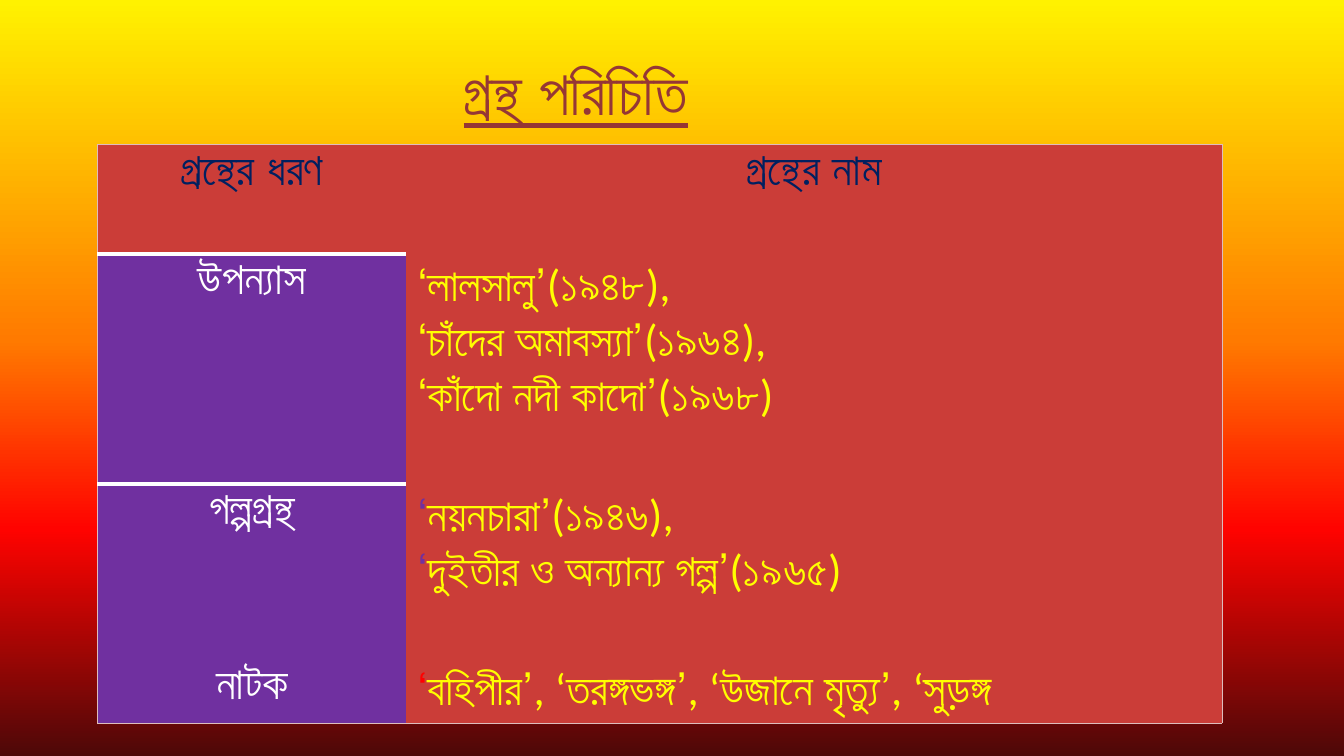
import pptx
import pptx.util
import pptx.dml.color
import pptx.enum.text
import pptx.oxml
import pptx.oxml.ns
from dataclasses import dataclass
from lxml import etree

Inches, Pt = pptx.util.Inches, pptx.util.Pt
ALIGN = pptx.enum.text.PP_ALIGN


@dataclass(frozen=True)
class Theme:
    font: str = "Calibri"
    title_size: int = 44
    table_size: int = 32
    title: str = "953735"
    header: str = "002060"
    purple: str = "7030A0"
    crimson: str = "CB3D38"
    yellow: str = "FFFF00"
    red: str = "FF0000"
    white: str = "FFFFFF"
    frame: str = "DEBDBD"
    background: tuple = ((0, "FFF200"), (45, "FF7A00"), (70, "FF0300"), (100, "4D0808"))


T = Theme()
NO_STYLE = "{2D5ABB26-0587-4C30-8999-92F81FD0307C}"
HEADERS = ["গ্রন্থের ধরণ", "গ্রন্থের নাম"]
# Kind of book, lines of titles, colour of each line's opening quote
BOOKS = [
    ("উপন্যাস", ["‘লালসালু’(১৯৪৮),", "‘চাঁদের অমাবস্যা’(১৯৬৪),", "‘কাঁদো নদী কাদো’(১৯৬৮)"], T.yellow),
    ("গল্পগ্রন্থ", ["‘নয়নচারা’(১৯৪৬),", "‘দুইতীর ও অন্যান্য গল্প’(১৯৬৫)"], T.purple),
    ("নাটক", ["‘বহিপীর’, ‘তরঙ্গভঙ্গ’, ‘উজানে মৃত্যু’, ‘সুড়ঙ্গ"], T.red),
]
COL_WIDTHS = [3.06, 8.09]
ROW_HEIGHTS = [1.09, 2.28, 1.73, 0.63]


def rgb(color):
    return pptx.dml.color.RGBColor.from_string(color)


def add_run(p, text, color, size=T.table_size, bold=False, underline=None):
    r = p.add_run()
    r.text = text
    f = r.font
    f.name, f.size, f.bold, f.underline = T.font, Pt(size), bold, underline
    f.color.rgb = rgb(color)


def set_background(s):
    stops = "".join(f'<a:gs pos="{pos * 1000}"><a:srgbClr val="{color}"/></a:gs>'
                    for pos, color in T.background)
    bg = pptx.oxml.parse_xml(
        f'<p:bg {pptx.oxml.ns.nsdecls("p", "a")}><p:bgPr><a:gradFill rotWithShape="1">'
        f'<a:gsLst>{stops}</a:gsLst><a:lin ang="5400000" scaled="0"/></a:gradFill>'
        '<a:effectLst/></p:bgPr></p:bg>')
    s.element.cSld.insert(0, bg)


def set_borders(cell, borders):
    """Draw {side: (colour, points)}; sides must precede the cell fill."""
    tcPr = cell._tc.get_or_add_tcPr()
    position = 0
    for side in "LRTB":
        if side in borders:
            color, width = borders[side]
            ln = pptx.oxml.parse_xml(
                f'<a:ln{side} {pptx.oxml.ns.nsdecls("a")} w="{Pt(width)}">'
                f'<a:solidFill><a:srgbClr val="{color}"/></a:solidFill></a:ln{side}>')
            tcPr.insert(position, ln)
            position += 1


def add_title(s, text):
    sp = s.shapes.add_textbox(Inches(4.5), Inches(0.49), Inches(3.78), Inches(0.84))
    tf = sp.text_frame
    tf.word_wrap = False
    tf.auto_size = pptx.enum.text.MSO_AUTO_SIZE.SHAPE_TO_FIT_TEXT
    add_run(tf.paragraphs[0], text, T.title, T.title_size, True, True)


def fill_label(cell, text, color, bold=False):
    p = cell.text_frame.paragraphs[0]
    p.alignment = ALIGN.CENTER
    add_run(p, text, color, bold=bold)


def fill_titles(cell, lines, quote_color):
    tf = cell.text_frame
    for i, line in enumerate(lines):
        p = tf.add_paragraph() if i else tf.paragraphs[0]
        if quote_color == T.yellow:
            add_run(p, line, T.yellow)
        else:
            add_run(p, line[0], quote_color)
            add_run(p, line[1:], T.yellow)


def add_book_table(s):
    rows, cols = len(ROW_HEIGHTS), len(COL_WIDTHS)
    frame = s.shapes.add_table(rows, cols, Inches(0.97), Inches(1.43),
                               Inches(sum(COL_WIDTHS)), Inches(sum(ROW_HEIGHTS)))
    table = frame.table
    table._tbl.tblPr.find(pptx.oxml.ns.qn("a:tableStyleId")).text = NO_STYLE
    table.horz_banding = False
    for column, width in zip(table.columns, COL_WIDTHS):
        column.width = Inches(width)
    for row, height in zip(table.rows, ROW_HEIGHTS):
        row.height = Inches(height)

    # Text
    for c, header in enumerate(HEADERS):
        fill_label(table.cell(0, c), header, T.header, bold=True)
    for r, (kind, lines, quote_color) in enumerate(BOOKS, start=1):
        fill_label(table.cell(r, 0), kind, T.white)
        fill_titles(table.cell(r, 1), lines, quote_color)

    # Fills, outer frame and the rule under the first header
    edge, rule = (T.frame, 0.75), (T.white, 3)
    for r in range(rows):
        for c in range(cols):
            cell = table.cell(r, c)
            cell.fill.solid()
            cell.fill.fore_color.rgb = rgb(T.purple if r and c == 0 else T.crimson)
            borders = {"R" if c else "L": edge}
            if r == 0:
                borders["T"] = edge
            if r == rows - 1:
                borders["B"] = edge
            if c == 0 and r < 2:
                borders["T" if r else "B"] = rule
            set_borders(cell, borders)


def main():
    prs = pptx.Presentation()
    prs.slide_width, prs.slide_height = Inches(13.33), Inches(7.5)
    s = prs.slides.add_slide(prs.slide_layouts[6])
    set_background(s)
    add_book_table(s)
    add_title(s, "গ্রন্থ পরিচিতি")
    prs.save("out.pptx")


if __name__ == "__main__":
    main()
